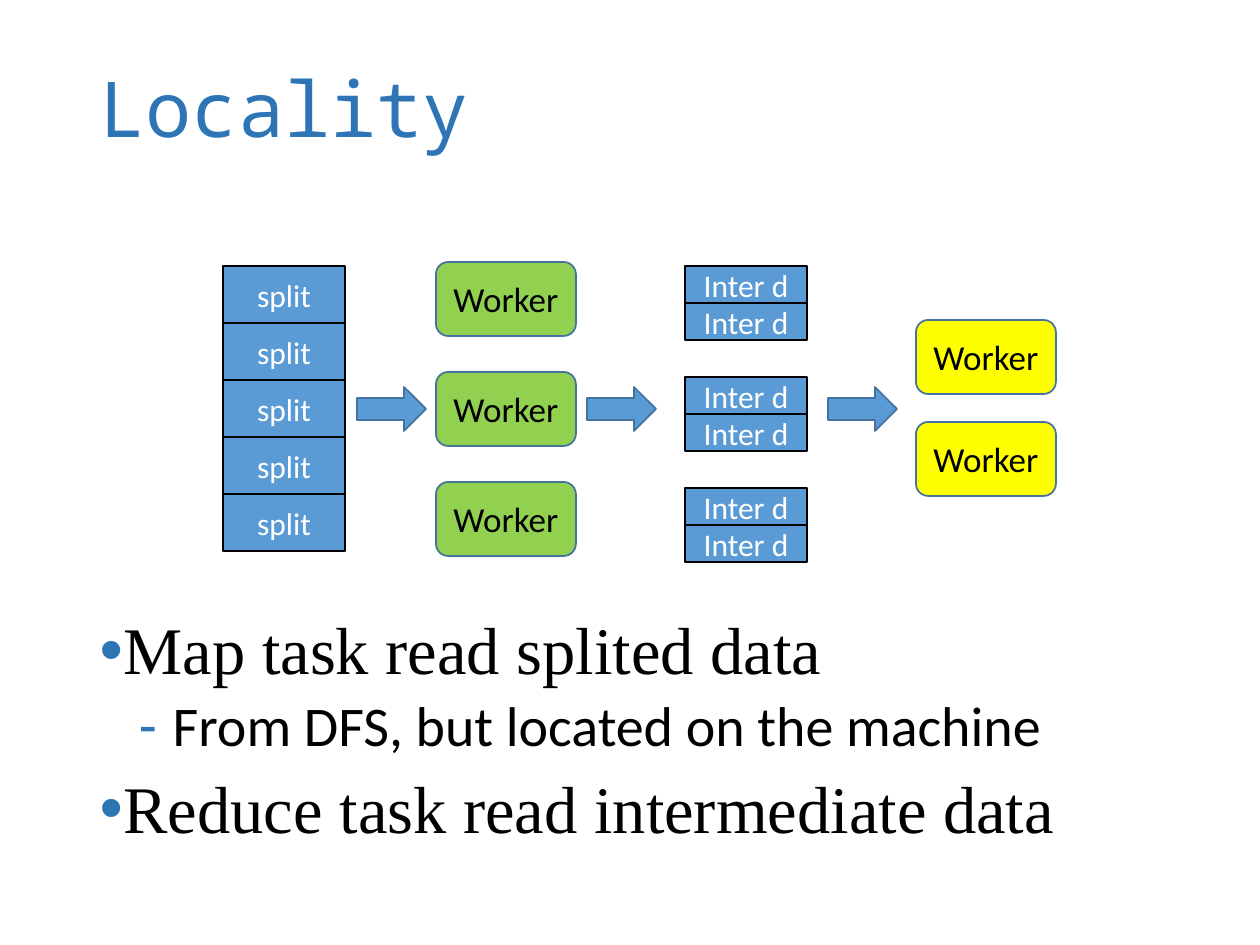
from dataclasses import dataclass

from lxml.etree import SubElement
from pptx import Presentation
from pptx.dml.color import RGBColor
from pptx.enum.shapes import MSO_SHAPE
from pptx.enum.text import MSO_ANCHOR, MSO_AUTO_SIZE, PP_ALIGN
from pptx.oxml.ns import qn
from pptx.util import Emu, Inches, Pt

PX = Inches(1) / 126
BLUE, NAVY, BLACK, WHITE = "5B9BD5", "43739E", "000000", "FFFFFF"
GREEN, YELLOW, ACCENT = "92D050", "FFFF00", "2E75B6"


@dataclass(frozen=True)
class Style:
    kind: MSO_SHAPE
    w: int
    h: int
    fill: str
    line: str
    line_pt: float
    size: int = 18
    color: str = WHITE


@dataclass(frozen=True)
class Column:
    style: Style
    text: str
    x: int
    y: int
    step: int
    count: int


@dataclass(frozen=True)
class Bullet:
    text: str
    level: int
    char: str
    indent: int
    before: int
    size: int
    font: str


MAPPER = Style(MSO_SHAPE.ROUNDED_RECTANGLE, 140, 74, GREEN, NAVY, 1, 20, BLACK)
REDUCER = Style(MSO_SHAPE.ROUNDED_RECTANGLE, 140, 74, YELLOW, NAVY, 1, 20, BLACK)
SPLIT = Style(MSO_SHAPE.RECTANGLE, 122, 57, BLUE, BLACK, 1.5)
INTER = Style(MSO_SHAPE.RECTANGLE, 122, 37, BLUE, BLACK, 1.5)
ARROW = Style(MSO_SHAPE.RIGHT_ARROW, 69, 44, BLUE, NAVY, 1)

COLUMNS = [
    Column(MAPPER, "Worker", 436, 262, 110, 3),
    Column(SPLIT, "split", 223, 266, 57, 5),
    *(Column(INTER, "Inter d", 685, 266 + 111 * i, 37, 2) for i in range(3)),
    Column(REDUCER, "Worker", 916, 320, 102, 2),
    *(Column(ARROW, "", x, 387, 0, 1) for x in (357, 587, 828)),
]

BULLETS = [
    Bullet("Map task read splited data", 0, "•", 24, 10, 38, "Times New Roman"),
    Bullet("From DFS, but located on the machine", 1, "‐", 73, 5, 32, "Calibri"),
    Bullet("Reduce task read intermediate data", 0, "•", 24, 10, 38, "Times New Roman"),
]


def px(n: int) -> Emu:
    return Emu(round(n * PX))


def rgb(value: str) -> RGBColor:
    return RGBColor.from_string(value)


def write(p, text: str, *, size: int, font: str = "Calibri", color: str = BLACK,
          align=PP_ALIGN.LEFT, spacing: float = 1.0, before: int = 0) -> None:
    p.alignment, p.line_spacing, p.space_before = align, spacing, Pt(before)
    r = p.add_run()
    r.text = text
    r.font.size, r.font.name = Pt(size), font
    r.font.color.rgb = rgb(color)


def add_bullet(p, b: Bullet) -> None:
    p.level = b.level
    write(p, b.text, size=b.size, font=b.font, spacing=0.9, before=b.before)
    pPr = p._p.get_or_add_pPr()
    pPr.set("marL", str(px(b.indent)))
    pPr.set("indent", str(px(-34)))
    clr = SubElement(pPr, qn("a:buClr"))
    SubElement(clr, qn("a:srgbClr"), val=ACCENT)
    SubElement(pPr, qn("a:buChar"), char=b.char)


def place(sp, x: int, y: int, w: int, h: int, anchor: MSO_ANCHOR):
    sp.left, sp.top, sp.width, sp.height = px(x), px(y), px(w), px(h)
    tf = sp.text_frame
    tf.auto_size, tf.word_wrap = MSO_AUTO_SIZE.NONE, True
    tf.vertical_anchor = anchor
    return tf


def add_column(s, c: Column) -> None:
    st = c.style
    for i in range(c.count):
        sp = s.shapes.add_shape(st.kind, px(c.x), px(c.y + i * c.step), px(st.w), px(st.h))
        sp.shadow.inherit = False
        sp.fill.solid()
        sp.fill.fore_color.rgb = rgb(st.fill)
        sp.line.color.rgb = rgb(st.line)
        sp.line.width = Pt(st.line_pt)
        if c.text:
            tf = sp.text_frame
            tf.vertical_anchor = MSO_ANCHOR.MIDDLE
            write(tf.paragraphs[0], c.text, size=st.size, color=st.color,
                  align=PP_ALIGN.CENTER)


def main() -> None:
    prs = Presentation()
    prs.slide_width, prs.slide_height = Inches(10), Inches(7.5)
    s = prs.slides.add_slide(prs.slide_layouts[1])

    tf = place(s.shapes.title, 87, 21, 1086, 183, MSO_ANCHOR.MIDDLE)
    write(tf.paragraphs[0], "Locality", size=44, font="Noto Sans Mono",
          color=ACCENT, spacing=0.9)

    tf = place(s.placeholders[1], 87, 611, 1086, 309, MSO_ANCHOR.TOP)
    for i, b in enumerate(BULLETS):
        add_bullet(tf.add_paragraph() if i else tf.paragraphs[0], b)

    for c in COLUMNS:
        add_column(s, c)
    prs.save("out.pptx")


if __name__ == "__main__":
    main()
